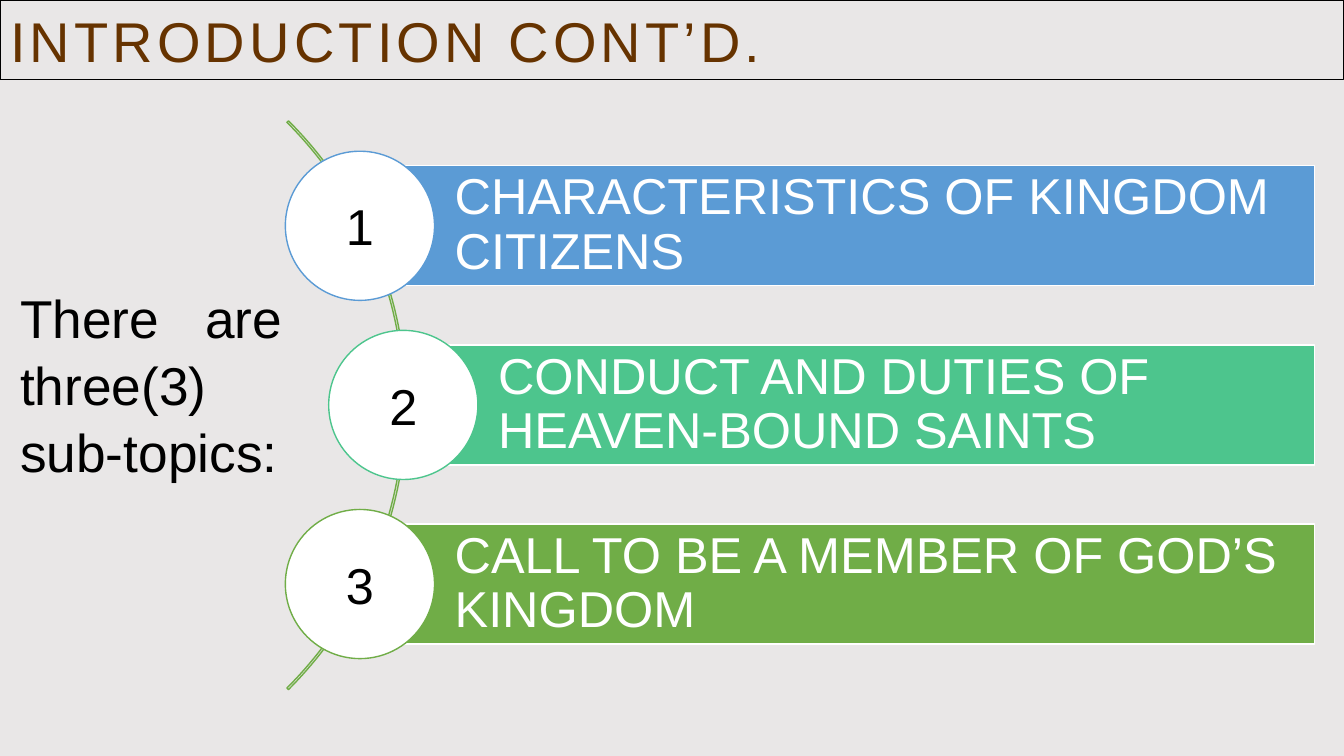
from dataclasses import dataclass

from lxml import etree
from pptx import Presentation
from pptx import util as u
from pptx.dml.color import RGBColor
from pptx.enum import shapes, text
from pptx.oxml import ns


@dataclass(frozen=True)
class Theme:
    font: str = "Arial"
    backdrop: str = "E9E7E7"
    heading: str = "663300"
    dark: str = "000000"
    light: str = "FFFFFF"
    blue: str = "5B9BD5"
    mint: str = "4DC58D"
    green: str = "70AD47"
    title_size: float = 40
    body_size: float = 38
    item_size: float = 36


class SlideBuilder:
    """Places elements on a grid of 133.3 columns by 75 rows."""

    COLUMNS, ROWS = 133.3, 75

    def __init__(self, deck, theme):
        self.deck, self.theme = deck, theme
        self.page = deck.slides.add_slide(deck.slide_layouts[1])
        fill = self.page.background.fill
        fill.solid()
        fill.fore_color.rgb = RGBColor.from_string(theme.backdrop)

    def cells(self, left, top, width, height):
        column = self.deck.slide_width / self.COLUMNS
        row = self.deck.slide_height / self.ROWS
        return [round(n) for n in (left * column, top * row, width * column, height * row)]

    def outline(self, shape, color, width):
        shape.line.color.rgb = RGBColor.from_string(color)
        shape.line.width = u.Pt(width)

    def add_words(self, shape, words, size, color, align, anchor, spacing=1.0):
        frame = shape.text_frame
        frame.word_wrap = True
        frame.auto_size = text.MSO_AUTO_SIZE.NONE
        frame.vertical_anchor = anchor
        para = frame.paragraphs[0]
        para.alignment, para.line_spacing = align, spacing
        span = para.add_run()
        span.text = words
        span.font.name, span.font.size = self.theme.font, u.Pt(size)
        span.font.color.rgb = RGBColor.from_string(color)
        return para, span

    def place(self, shape, area):
        shape.left, shape.top, shape.width, shape.height = self.cells(*area)

    def title(self, words, area):
        box = self.page.shapes.title
        self.place(box, area)
        self.outline(box, self.theme.dark, 0.75)
        _, span = self.add_words(box, words, self.theme.title_size, self.theme.heading,
                                 text.PP_ALIGN.JUSTIFY, text.MSO_ANCHOR.BOTTOM, 0.9)
        span.font._element.set("spc", "300")  # letter spacing

    def body(self, words, area):
        box = self.page.placeholders[1]
        self.place(box, area)
        para, _ = self.add_words(box, words, self.theme.body_size, self.theme.dark,
                                 text.PP_ALIGN.JUSTIFY, text.MSO_ANCHOR.TOP, 1.05)
        para.space_before = u.Pt(10)
        # No bullet, no hanging indent
        props = para._p.get_or_add_pPr()
        props.set("marL", "0")
        props.set("indent", "0")
        etree.SubElement(props, ns.qn("a:buNone"))

    def shape(self, kind, area, fill, line):
        shape = self.page.shapes.add_shape(kind, *self.cells(*area))
        shape.shadow.inherit = False
        if fill:
            shape.fill.solid()
            shape.fill.fore_color.rgb = RGBColor.from_string(fill)
        else:
            shape.fill.background()
        self.outline(shape, line, 1)
        return shape

    def arc(self, area, color):
        arc = self.shape(shapes.MSO_SHAPE.BLOCK_ARC, area, None, color)
        # Start angle, end angle and band thickness
        for index, value in enumerate((189, 27, 0.0027)):
            arc.adjustments[index] = value

    def bar(self, words, area, color):
        bar = self.shape(shapes.MSO_SHAPE.RECTANGLE, area, color, self.theme.light)
        frame = bar.text_frame
        frame.margin_left = u.Inches(0.94)
        frame.margin_right = frame.margin_top = frame.margin_bottom = u.Inches(0.1)
        self.add_words(bar, words, self.theme.item_size, self.theme.light,
                       text.PP_ALIGN.LEFT, text.MSO_ANCHOR.MIDDLE, 0.9)

    def badge(self, number, center, middle, size, color):
        area = (center - size / 2, middle - size / 2, size, size)
        badge = self.shape(shapes.MSO_SHAPE.OVAL, area, self.theme.light, color)
        self.add_words(badge, str(number), self.theme.item_size, self.theme.dark,
                       text.PP_ALIGN.CENTER, text.MSO_ANCHOR.MIDDLE)


def main():
    deck = Presentation()
    deck.slide_width, deck.slide_height = u.Inches(13.33), u.Inches(7.5)
    theme = Theme()
    slide = SlideBuilder(deck, theme)

    # Heading and lead-in
    slide.title("INTRODUCTION CONT’D.", (0, 0, 133.3, 7.9))
    slide.body("There are three(3) sub-topics:", (1, 27.5, 28, 19.9))

    # Curve behind the badges
    slide.arc((-39.5, 0.3, 79.8, 79.8), theme.green)

    # Sub-topics: each bar starts at the centre of its badge
    topics = [
        ("CHARACTERISTICS OF KINGDOM CITIZENS", 35.7, theme.blue),
        ("CONDUCT AND DUTIES OF HEAVEN-BOUND SAINTS", 40, theme.mint),
        ("CALL TO BE A MEMBER OF GOD’S KINGDOM", 35.7, theme.green),
    ]
    first_middle, pitch, bar_height, bar_end, badge_size = 22.4, 17.77, 11.9, 130.4, 14.8
    for index, (words, start, color) in enumerate(topics):
        middle = first_middle + index * pitch
        slide.bar(words, (start, middle - bar_height / 2, bar_end - start, bar_height), color)
        slide.badge(index + 1, start, middle, badge_size, color)

    deck.save("out.pptx")


if __name__ == "__main__":
    main()
